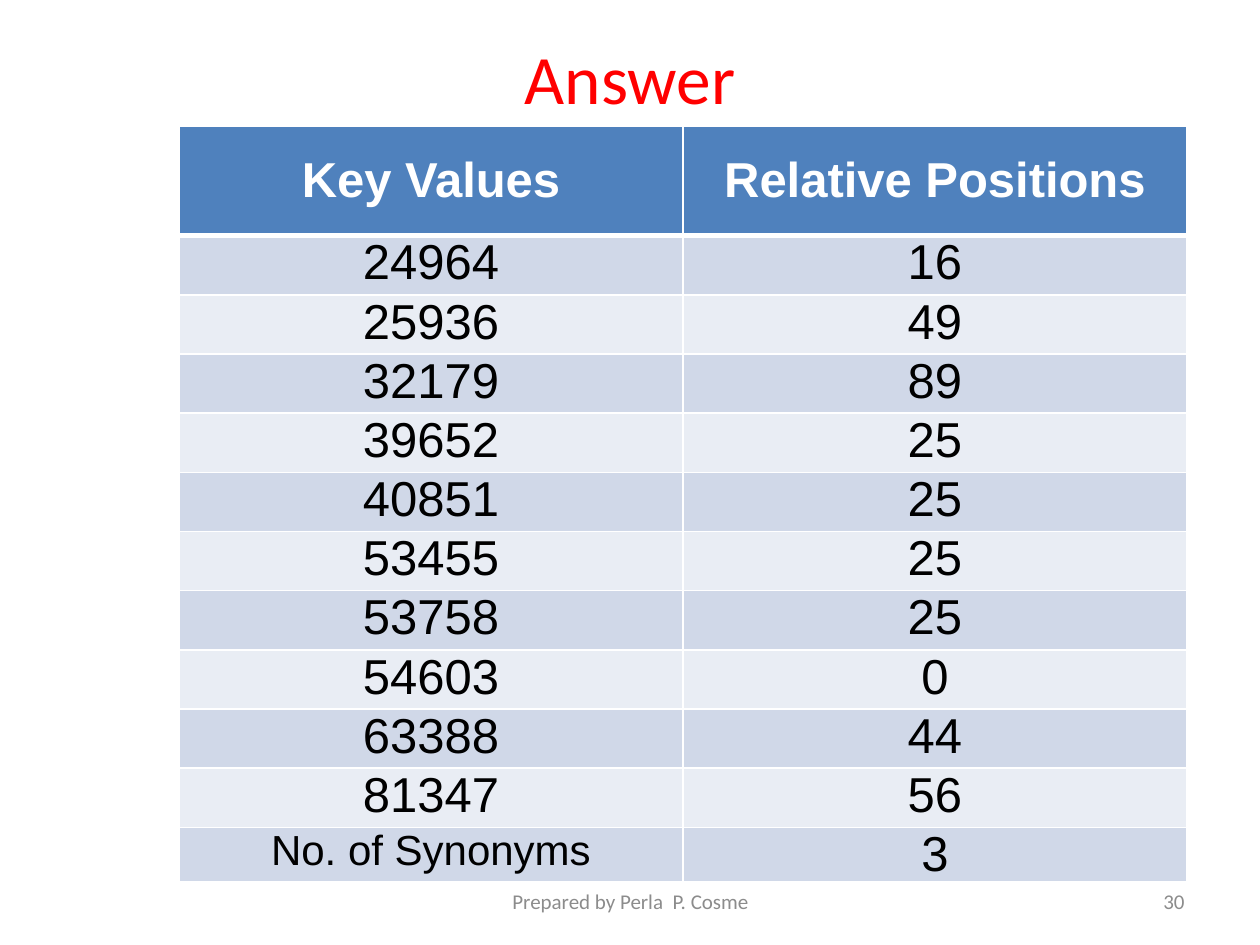
from lxml.etree import SubElement
from pptx import Presentation
from pptx.dml.color import RGBColor
from pptx.enum.text import MSO_ANCHOR as Anchor, MSO_AUTO_SIZE as AutoSize, PP_ALIGN as Align
from pptx.oxml.ns import qn
from pptx.util import Emu, Pt

TITLE = "Answer"
HEADER = ("Key Values", "Relative Positions")
ROWS = [
    ("24964", "16"),
    ("25936", "49"),
    ("32179", "89"),
    ("39652", "25"),
    ("40851", "25"),
    ("53455", "25"),
    ("53758", "25"),
    ("54603", "0"),
    ("63388", "44"),
    ("81347", "56"),
    ("No. of Synonyms", "3"),
]
FOOTERS = [
    ("Prepared by Perla  P. Cosme", 342, 317, Align.CENTER),
    ("30", 717, 233, Align.RIGHT),
]

RED = RGBColor(0xFF, 0x00, 0x00)
WHITE = RGBColor(0xFF, 0xFF, 0xFF)
BLACK = RGBColor(0x00, 0x00, 0x00)
GRAY = RGBColor(0x8C, 0x8C, 0x8C)
BLUE = RGBColor(0x4F, 0x81, 0xBD)
BANDS = (RGBColor(0xD0, 0xD8, 0xE8), RGBColor(0xE9, 0xED, 0xF4))

EMU_PER_PX = 9144
COLUMN_WIDTH = 400
HEADER_HEIGHT, ROW_HEIGHT, LAST_HEIGHT = 87, 47, 43


def px(*lengths):
    return [Emu(length * EMU_PER_PX) for length in lengths]


def write(frame, text, size, color, font="Calibri", bold=False, align=Align.CENTER):
    para = frame.paragraphs[0]
    para.alignment = align
    span = para.add_run()
    span.text = text
    span.font.size = Pt(size)
    span.font.name = font
    span.font.bold = bold
    span.font.color.rgb = color


def add_borders(cell, bottom=1):
    properties = cell._tc.get_or_add_tcPr()
    for tag, width in (("lnL", 1), ("lnR", 1), ("lnT", 1), ("lnB", bottom)):
        line = SubElement(properties, qn(f"a:{tag}"), w=str(Pt(width)))
        fill = SubElement(line, qn("a:solidFill"))
        SubElement(fill, qn("a:srgbClr"), val=str(WHITE))


def fill_cell(cell, text, fill, size=28, color=BLACK, bold=False, anchor=Anchor.TOP, bottom=1):
    add_borders(cell, bottom)
    cell.fill.solid()
    cell.fill.fore_color.rgb = fill
    cell.margin_left, cell.margin_right, cell.margin_top, cell.margin_bottom = px(7, 7, 0, 0)
    cell.vertical_anchor = anchor
    write(cell.text_frame, text, size, color, font="Arial", bold=bold)


deck = Presentation()
deck.slide_width, deck.slide_height = px(1000, 750)
page = deck.slides.add_slide(deck.slide_layouts[5])

title = page.shapes.title
title.left, title.top, title.width, title.height = px(50, 30, 900, 62)
title.text_frame.auto_size = AutoSize.NONE
title.text_frame.vertical_anchor = Anchor.MIDDLE
write(title.text_frame, TITLE, 39.6, RED)

heights = [HEADER_HEIGHT] + [ROW_HEIGHT] * (len(ROWS) - 1) + [LAST_HEIGHT]
table = page.shapes.add_table(
    len(heights), len(HEADER), *px(142, 100, COLUMN_WIDTH * len(HEADER), sum(heights))
).table
for column in table.columns:
    column.width = px(COLUMN_WIDTH)[0]
for row, height in zip(table.rows, heights):
    row.height = px(height)[0]

for cell, text in zip(table.rows[0].cells, HEADER):
    fill_cell(cell, text, BLUE, color=WHITE, bold=True, anchor=Anchor.MIDDLE, bottom=3)
for index, values in enumerate(ROWS):
    for cell, text in zip(table.rows[index + 1].cells, values):
        fill_cell(cell, text, BANDS[index % 2], size=28 if text.isdigit() else 24)

for text, left, width, align in FOOTERS:
    box = page.shapes.add_textbox(*px(left, 695, width, 40))
    box.text_frame.word_wrap = True
    box.text_frame.vertical_anchor = Anchor.MIDDLE
    write(box.text_frame, text, 12, GRAY, align=align)

deck.save("out.pptx")
